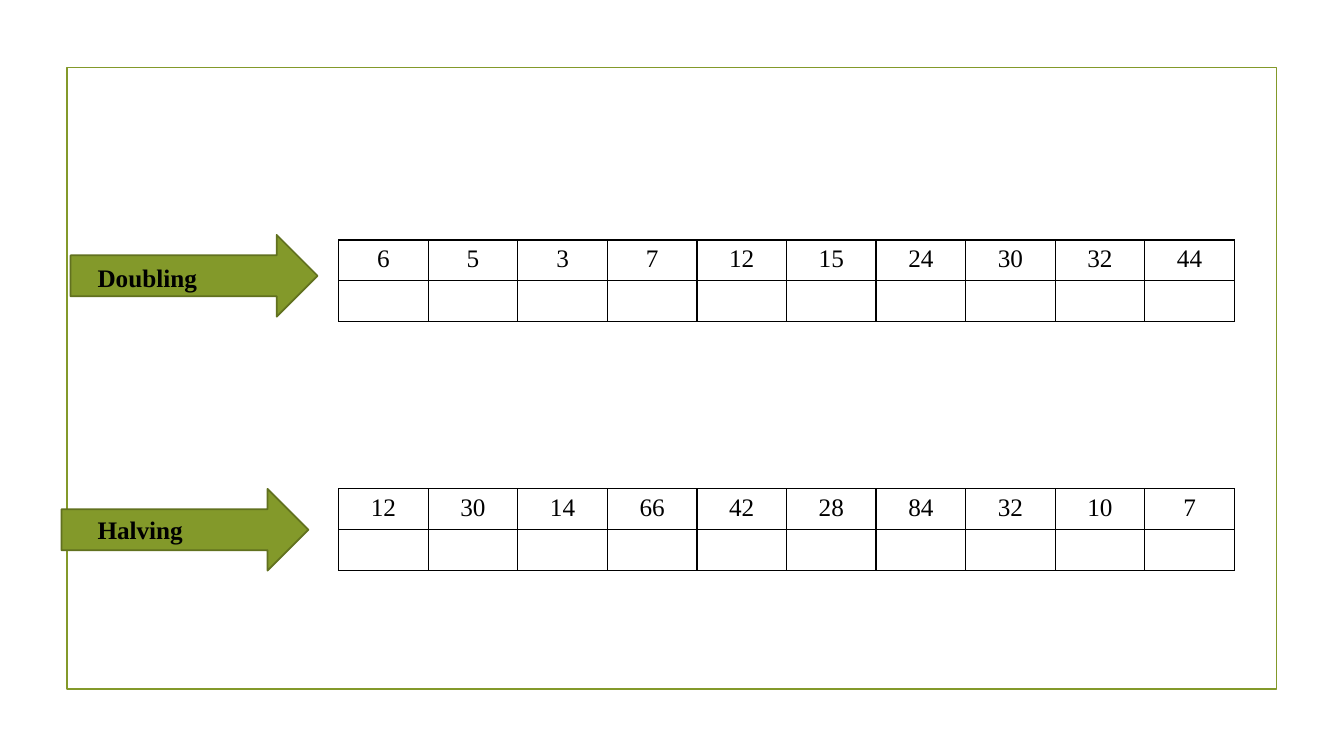
"""Build a slide with doubling and halving number tables."""
from dataclasses import dataclass

from lxml import etree
from pptx import Presentation
from pptx.dml.color import RGBColor
from pptx.enum.shapes import MSO_SHAPE
from pptx.enum.text import PP_ALIGN
from pptx.oxml.ns import qn
from pptx.util import Pt

RECT, ARROW = MSO_SHAPE.RECTANGLE, MSO_SHAPE.RIGHT_ARROW
LEFT, CENTER = PP_ALIGN.LEFT, PP_ALIGN.CENTER
FONT = "Times New Roman"
BLACK, GREEN, DARK_GREEN = "000000", "83992A", "61711F"
TABLE_LEFT, COL_WIDTH, ROW_HEIGHT = 241.9, 64, 29.2
BORDER_WIDTH = 1


@dataclass
class Exercise:
    label: str
    label_top: float
    arrow_left: float
    arrow_top: float
    table_top: float
    numbers: tuple[int, ...]


EXERCISES = [
    Exercise("Doubling", 183.6, 50.4, 167.8, 171.4,
             (6, 5, 3, 7, 12, 15, 24, 30, 32, 44)),
    Exercise("Halving", 363.6, 43.9, 349.2, 349.2,
             (12, 30, 14, 66, 42, 28, 84, 32, 10, 7)),
]


def color(value: str) -> RGBColor:
    """Return the colour for a hex string."""
    return RGBColor.from_string(value)


def write(tf, text: str, *, bold: bool = False, align=LEFT) -> None:
    """Put formatted text in the first paragraph of a text frame."""
    p = tf.paragraphs[0]
    p.alignment = align
    r = p.add_run()
    r.text = text
    r.font.name, r.font.size, r.font.bold = FONT, Pt(18), bold
    r.font.color.rgb = color(BLACK)


def add_box(slide, kind, left: float, top: float, width: float, height: float,
            line: str, fill: str | None = None) -> None:
    """Draw a preset shape with an outline and an optional fill."""
    sp = slide.shapes.add_shape(kind, Pt(left), Pt(top), Pt(width), Pt(height))
    sp.shadow.inherit = False
    sp.line.color.rgb = color(line)
    sp.line.width = Pt(1.25)
    if fill:
        sp.fill.solid()
        sp.fill.fore_color.rgb = color(fill)
    else:
        sp.fill.background()


def add_borders(cell) -> None:
    """Give a cell a solid black border on every side."""
    tc_pr = cell._tc.get_or_add_tcPr()
    for i, side in enumerate(("a:lnL", "a:lnR", "a:lnT", "a:lnB")):
        ln = etree.Element(qn(side), w=str(Pt(BORDER_WIDTH)))
        fill = etree.SubElement(ln, qn("a:solidFill"))
        etree.SubElement(fill, qn("a:srgbClr"), val=BLACK)
        tc_pr.insert(i, ln)


def add_number_table(slide, top: float, numbers: tuple[int, ...]) -> None:
    """Draw a row of numbers above a row of empty answer cells."""
    count = len(numbers)
    table = slide.shapes.add_table(
        2, count, Pt(TABLE_LEFT), Pt(top),
        Pt(count * COL_WIDTH), Pt(2 * ROW_HEIGHT)).table
    table.first_row = table.horz_banding = False
    for column in table.columns:
        column.width = Pt(COL_WIDTH)
    for row in table.rows:
        row.height = Pt(ROW_HEIGHT)
    for cell in table.iter_cells():
        cell.fill.background()
        add_borders(cell)
    for i, number in enumerate(numbers):
        write(table.cell(0, i).text_frame, str(number), align=CENTER)


def add_label(slide, text: str, top: float) -> None:
    """Place a bold label over an arrow."""
    sp = slide.shapes.add_textbox(Pt(62.6), Pt(top), Pt(122.4), Pt(28.8))
    sp.text_frame.word_wrap = True
    write(sp.text_frame, text, bold=True)


def main() -> None:
    """Build and save the presentation."""
    prs = Presentation()
    prs.slide_width, prs.slide_height = Pt(960), Pt(540)
    slide = prs.slides.add_slide(prs.slide_layouts[6])
    add_box(slide, RECT, 47.8, 48.2, 864, 444.2, GREEN)
    for ex in EXERCISES:
        add_number_table(slide, ex.table_top, ex.numbers)
        add_box(slide, ARROW, ex.arrow_left, ex.arrow_top, 176.4, 58.4,
                DARK_GREEN, GREEN)
        add_label(slide, ex.label, ex.label_top)
    prs.save("out.pptx")


if __name__ == "__main__":
    main()
